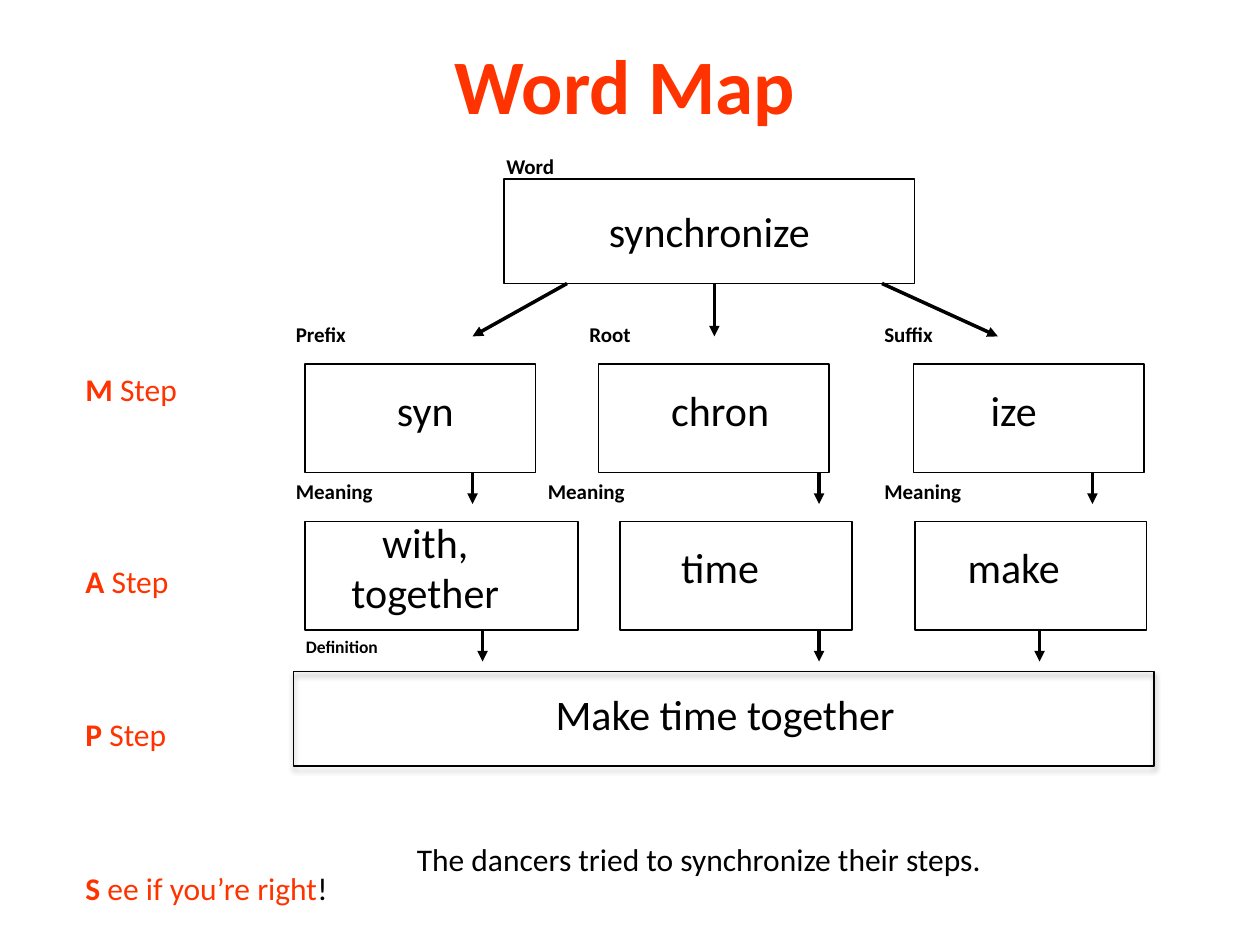
from lxml import etree
from pptx import Presentation, util as u
from pptx.dml.color import RGBColor
from pptx.enum import shapes, text
from pptx.oxml.ns import qn

THEME = {
    "font": "Calibri", "ink": RGBColor(0, 0, 0), "accent": RGBColor(0xFF, 0x33, 0),
    "title": 44, "word": 24, "body": 18, "label": 12, "small": 10,
    "arrow": 2, "box": 1, "top_box": 0.75,
}

# Content: words are (text, left, top, width, height)
TITLE = ("Word Map", 0.75, 0.25, 8.42, 0.83)
WORD = ("synchronize", 4, 1.42, 3.26, 0.83)
DEFINITION = ("Make time together", 2.42, 5.25, 6.67, 0.83)
DEFINITION_BOX = (2.33, 5.33, 6.83, 0.75)
SENTENCE = ("The dancers tried to synchronize their steps.", 3.21, 6.62, 4.72, 0.4)
COLUMNS = (2.33, 4.67, 7)
# Rows: top, words, boxes as (left, width), labels as (text, left)
ROWS = [
    (2.75, ("syn", "chron", "ize"),
     ((2.42, 1.83), (4.75, 1.83), (7.25, 1.83)),
     (("Prefix", 2.25), ("Root", 4.58), ("Suffix", 6.92))),
    (4, ("with, together", "time", "make"),
     ((2.42, 2.17), (4.92, 1.84), (7.26, 1.84)),
     (("Meaning", 2.25), ("Meaning", 4.25), ("Meaning", 6.92))),
]
TOP_ARROWS = ((4.5, 3.75), (5.67, 5.67), (7, 7.92))
DROP_ARROWS = ((3.75, (3.75, 6.5, 8.67)), (5, (3.83, 6.5, 8.25)))
# Steps: initial, rest, closing mark, blank lines above
STEPS = [("M", " Step", "", 0), ("A ", "Step", "", 4),
         ("P ", "Step", "", 3), ("S ", "ee if you’re right", "!", 3)]
LINE_PT = 22

prs = Presentation()
prs.slide_width, prs.slide_height = u.Inches(10), u.Inches(7.5)
s = prs.slides.add_slide(prs.slide_layouts[6])


def style(font, size, color=THEME["ink"], bold=False):
    font.name, font.size, font.bold = THEME["font"], u.Pt(size), bold
    font.color.rgb = color


def write(sp, words, size, color=THEME["ink"], bold=False, centred=True, wrap=False):
    tf = sp.text_frame
    tf.word_wrap = wrap
    tf.vertical_anchor = text.MSO_ANCHOR.MIDDLE if centred else text.MSO_ANCHOR.TOP
    p = tf.paragraphs[0]
    p.text = words
    p.alignment = text.PP_ALIGN.CENTER if centred else text.PP_ALIGN.LEFT
    style(p.font, size, color, bold)


def textbox(*at):
    return s.shapes.add_textbox(*map(u.Inches, at))


def box(at, width):
    sp = s.shapes.add_shape(shapes.MSO_SHAPE.RECTANGLE, *map(u.Inches, at))
    sp.shadow.inherit = False
    sp.fill.background()
    sp.line.color.rgb = THEME["ink"]
    sp.line.width = u.Pt(width)
    return sp


def label(words, left, top, size=THEME["label"]):
    write(textbox(left, top, 1, 0.33), words, size, bold=True, centred=False, wrap=True)


def arrow(x1, y1, x2, y2):
    c = s.shapes.add_connector(shapes.MSO_CONNECTOR.STRAIGHT,
                               *map(u.Inches, (x1, y1, x2, y2)))
    c.line.color.rgb = THEME["ink"]
    c.line.width = u.Pt(THEME["arrow"])
    etree.SubElement(c.line._get_or_add_ln(), qn("a:tailEnd"), type="triangle")
    etree.SubElement(c._element.spPr, qn("a:effectLst"))


# Title and the whole word
write(textbox(*TITLE[1:]), TITLE[0], THEME["title"], THEME["accent"], True, wrap=True)
write(box(WORD[1:], THEME["top_box"]), WORD[0], THEME["word"])
label("Word", 3.92, 1.17)

# Word parts and their meanings
for top, words, boxes, labels in ROWS:
    for word, column, (left, width), (name, label_left) in zip(words, COLUMNS, boxes, labels):
        box((left, top + 0.14, width, 0.86), THEME["box"])
        write(textbox(column, top, 2.09, 1), word, THEME["word"])
        label(name, label_left, top - 0.25)

# Definition, in a box with a soft shadow
sp = box(DEFINITION_BOX, THEME["box"])
shadow = etree.SubElement(sp._element.spPr.find(qn("a:effectLst")), qn("a:outerShdw"),
                          blurRad=str(u.Pt(3.1)), dist=str(u.Pt(1.8)),
                          dir="5400000", rotWithShape="0")
shade = etree.SubElement(shadow, qn("a:srgbClr"), val=str(THEME["ink"]))
etree.SubElement(shade, qn("a:alpha"), val="35000")
write(textbox(*DEFINITION[1:]), DEFINITION[0], THEME["word"])
label("Definition", 2.33, 5, THEME["small"])

# Arrows
for x1, x2 in TOP_ARROWS:
    arrow(x1, 2.25, x2, 2.67)
for y, xs in DROP_ARROWS:
    for x in xs:
        arrow(x, y, x, y + 0.25)

# Steps down the left side
tf = textbox(0.58, 2.89, 2.14, 4.34).text_frame
tf.word_wrap = False
for i, (initial, rest, mark, blanks) in enumerate(STEPS):
    p = tf.add_paragraph() if i else tf.paragraphs[0]
    p.space_before = u.Pt(blanks * LINE_PT)
    for words, color, bold in ((initial, THEME["accent"], True),
                               (rest, THEME["accent"], False),
                               (mark, THEME["ink"], False)):
        if words:
            r = p.add_run()
            r.text = words
            style(r.font, THEME["body"], color, bold)

# Example sentence
write(textbox(*SENTENCE[1:]), SENTENCE[0], THEME["body"], centred=False)

prs.save("out.pptx")
